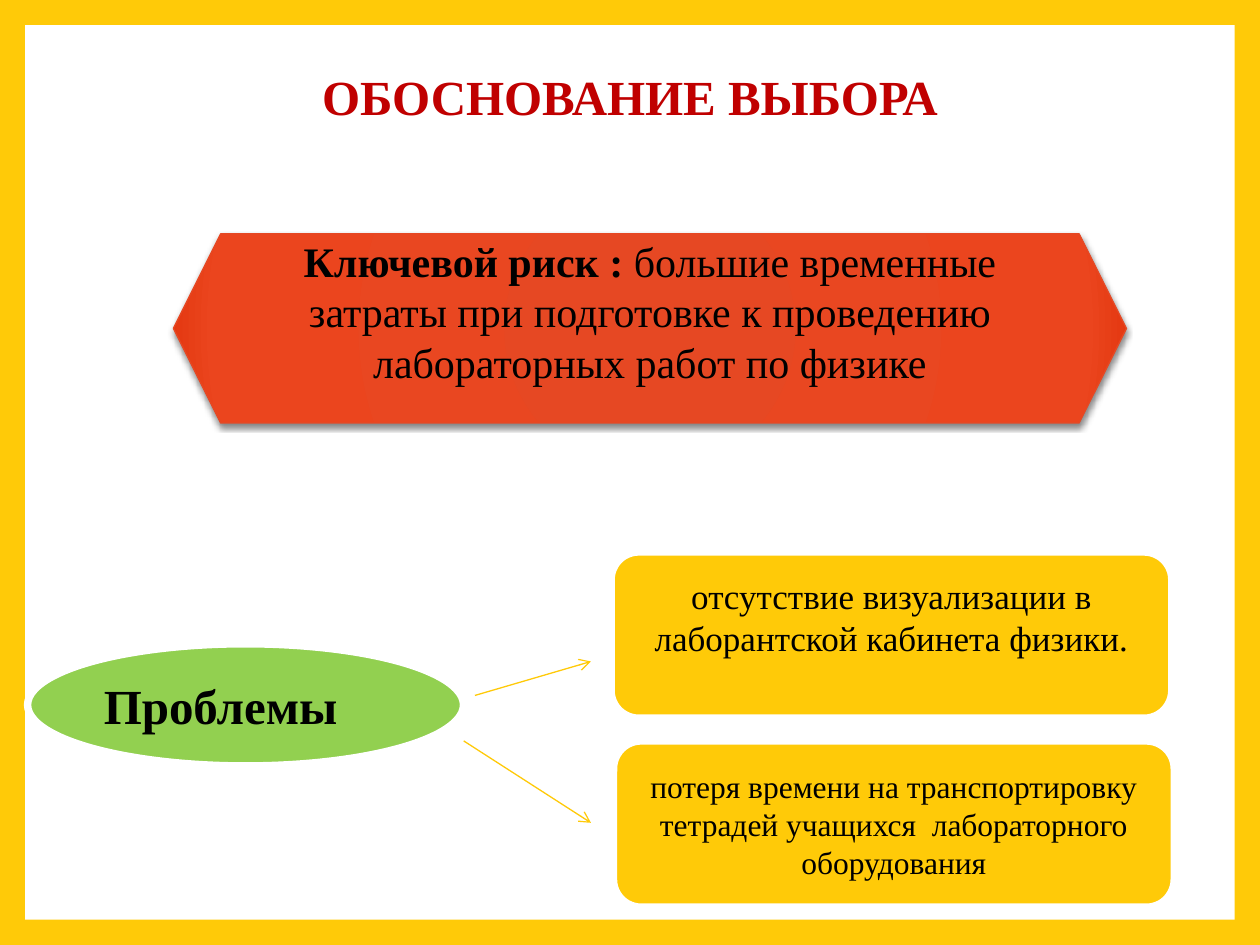
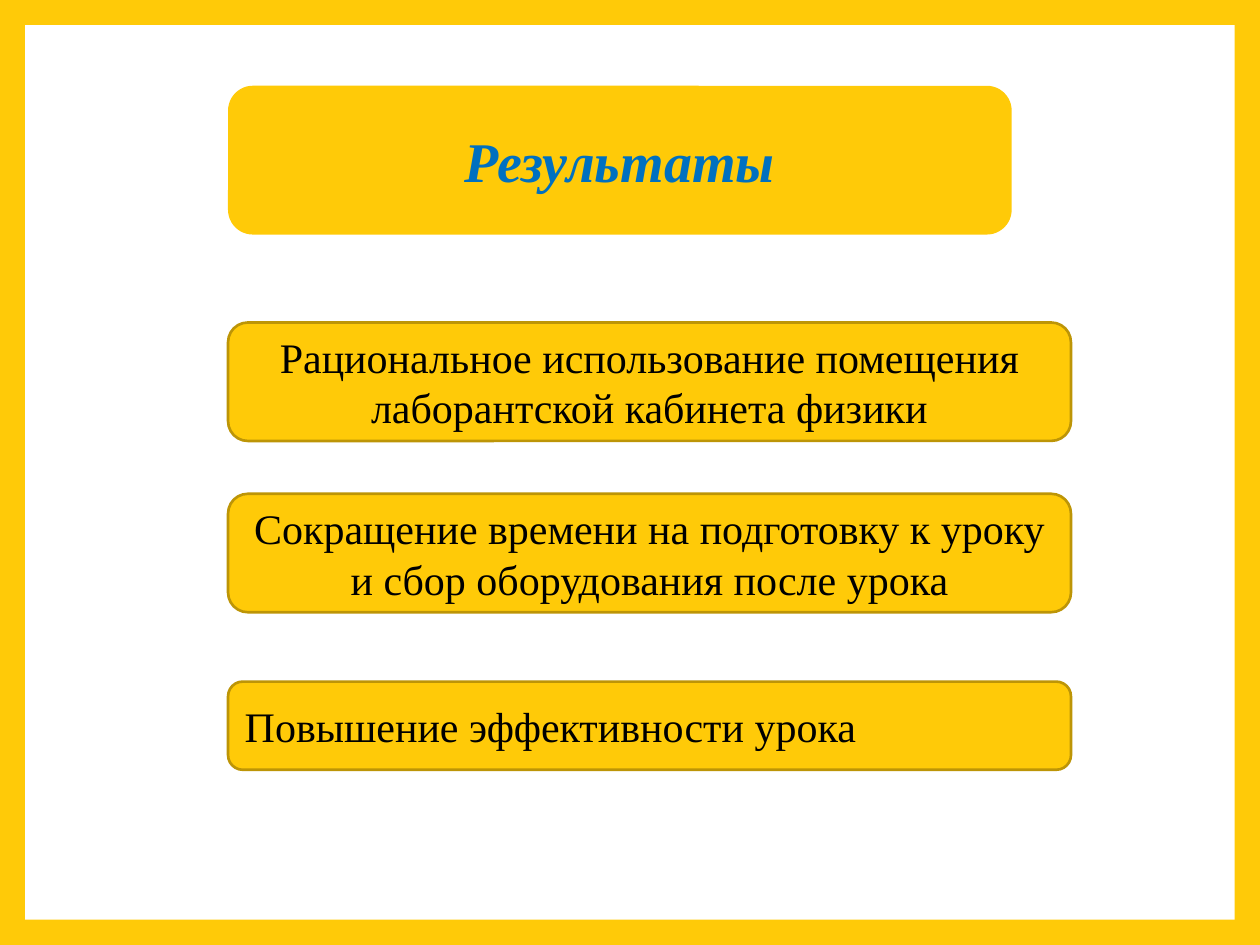
from lxml.etree import SubElement
from pptx import Presentation
from pptx.dml.color import RGBColor
from pptx.enum.shapes import MSO_CONNECTOR, MSO_SHAPE
from pptx.enum.text import MSO_ANCHOR, PP_ALIGN
from pptx.oxml import parse_xml
from pptx.oxml.ns import nsdecls, qn
from pptx.util import Pt

FONT = "Times New Roman"
YELLOW = RGBColor(0xFF, 0xCA, 0x08)
DARK_YELLOW = RGBColor(0xBD, 0x95, 0x06)
WHITE = RGBColor(0xFF, 0xFF, 0xFF)
BLACK = RGBColor(0x00, 0x00, 0x00)
RED = RGBColor(0xC0, 0x00, 0x00)
GREEN = RGBColor(0x92, 0xD0, 0x50)
BLUE = RGBColor(0x00, 0x70, 0xC0)
ORANGE = RGBColor(0xE6, 0x48, 0x23)
DEEP_ORANGE = RGBColor(0xEB, 0x45, 0x1E)
BURNT_ORANGE = RGBColor(0xE2, 0x36, 0x0E)

FRAME = 14.4
RESULT_LEFT = 130.3
RESULT_WIDTH = 481.7
TITLE_ONLY, BLANK = 5, 6


def place(shape, left, top, width, height):
    shape.left, shape.top = Pt(left), Pt(top)
    shape.width, shape.height = Pt(width), Pt(height)


def format_paragraph(paragraph, size, color=BLACK, bold=None, italic=None, align=PP_ALIGN.CENTER):
    paragraph.alignment = align
    font = paragraph.font
    font.name, font.size, font.bold, font.italic = FONT, Pt(size), bold, italic
    font.color.rgb = color


def add_box(slide, kind, box, fill, line=None, line_width=1):
    left, top, width, height = box
    shape = slide.shapes.add_shape(kind, Pt(left), Pt(top), Pt(width), Pt(height))
    shape.shadow.inherit = False
    shape.fill.solid()
    shape.fill.fore_color.rgb = fill
    if line is None:
        shape.line.fill.background()
    else:
        shape.line.color.rgb = line
        shape.line.width = Pt(line_width)
    return shape


def write(shape, text, size, **style):
    shape.text_frame.text = text
    format_paragraph(shape.text_frame.paragraphs[0], size, **style)


def add_arrow(slide, start, end):
    points = [Pt(value) for value in (*start, *end)]
    arrow = slide.shapes.add_connector(MSO_CONNECTOR.STRAIGHT, *points)
    arrow.line.color.rgb = YELLOW
    arrow.line.width = Pt(0.75)
    SubElement(arrow.line._get_or_add_ln(), qn("a:tailEnd"), type="arrow")
    SubElement(arrow.element.spPr, qn("a:effectLst"))


def set_radial_gradient(shape, stops):
    stop_xml = "".join(
        f'<a:gs pos="{position * 1000}"><a:srgbClr val="{color}"/></a:gs>'
        for position, color in stops
    )
    gradient = parse_xml(
        f'<a:gradFill {nsdecls("a")} rotWithShape="1"><a:gsLst>{stop_xml}</a:gsLst>'
        '<a:path path="circle"><a:fillToRect l="100000" t="100000" r="100000" b="100000"/>'
        "</a:path></a:gradFill>"
    )
    properties = shape.element.spPr
    properties.replace(properties.find(qn("a:solidFill")), gradient)


def set_drop_shadow(shape):
    shape.element.spPr.find(qn("a:effectLst")).append(parse_xml(
        f'<a:outerShdw {nsdecls("a")} blurRad="{Pt(3)}" dist="{Pt(2)}" dir="5400000" rotWithShape="0">'
        f'<a:srgbClr val="{BLACK}"><a:alpha val="45000"/></a:srgbClr></a:outerShdw>'
    ))


def set_up_master(presentation, slide):
    master = presentation.slide_master
    master.background.fill.solid()
    master.background.fill.fore_color.rgb = YELLOW
    panel = add_box(slide, MSO_SHAPE.RECTANGLE, (FRAME, FRAME, 720 - 2 * FRAME, 540 - 2 * FRAME), WHITE)
    master.shapes.element.insert(2, panel.element)


def add_key_risk(slide):
    hexagon = add_box(slide, MSO_SHAPE.HEXAGON, (99.1, 133.7, 544.6, 108), ORANGE, ORANGE, 0.79)
    set_radial_gradient(hexagon, [(0, ORANGE), (90, DEEP_ORANGE), (100, BURNT_ORANGE)])
    set_drop_shadow(hexagon)
    frame = hexagon.text_frame
    frame.margin_top, frame.margin_bottom = Pt(0), Pt(20)
    paragraph = frame.paragraphs[0]
    format_paragraph(paragraph, 24)
    label = paragraph.add_run()
    label.text = "Ключевой риск : "
    label.font.bold = True
    paragraph.add_run().text = (
        "большие временные затраты при подготовке к проведению лабораторных работ по физике"
    )


def build_rationale(slide):
    title = slide.shapes.title
    place(title, 68.4, 22.3, 583.2, 69.1)
    title.text_frame.vertical_anchor = MSO_ANCHOR.MIDDLE
    write(title, "ОБОСНОВАНИЕ ВЫБОРА", 28, color=RED, bold=True)
    title.text_frame.paragraphs[0].line_spacing = 0.9

    problems = add_box(slide, MSO_SHAPE.OVAL, (15.8, 367.9, 249.1, 69.8), GREEN, WHITE, 4.25)
    write(problems, "Проблемы", 28, bold=True, align=PP_ALIGN.LEFT)

    problem_boxes = [
        (349.2, 315.4, 20, 24.3, "отсутствие визуализации в лаборантской кабинета физики."),
        (350.6, 423.4, 18, 3.6,
         "потеря времени на транспортировку тетрадей учащихся  лабораторного оборудования"),
    ]
    for left, top, size, bottom_margin, text in problem_boxes:
        box = add_box(slide, MSO_SHAPE.ROUNDED_RECTANGLE, (left, top, 320.4, 95), YELLOW, WHITE, 4.25)
        box.text_frame.margin_bottom = Pt(bottom_margin)
        write(box, text, size)

    add_arrow(slide, (271.4, 397.4), (337.7, 378))
    add_arrow(slide, (265, 423.4), (337.7, 470.2))
    add_key_risk(slide)


def build_results(slide):
    heading = add_box(slide, MSO_SHAPE.FLOWCHART_ALTERNATE_PROCESS, (RESULT_LEFT, 49, 447.8, 85), YELLOW)
    write(heading, "Результаты", 32, color=BLUE, bold=True, italic=True)

    results = [
        (184.3, 67.7, PP_ALIGN.CENTER, "Рациональное использование помещения лаборантской кабинета физики"),
        (282.2, 67.7, PP_ALIGN.CENTER,
         "Сокращение времени на подготовку к уроку и сбор оборудования после урока"),
        (389.5, 50.4, PP_ALIGN.LEFT, "Повышение эффективности урока"),
    ]
    for top, height, align, text in results:
        box = add_box(slide, MSO_SHAPE.ROUNDED_RECTANGLE,
                      (RESULT_LEFT, top, RESULT_WIDTH, height), YELLOW, DARK_YELLOW, 1.5)
        write(box, text, 24, align=align)


def main():
    presentation = Presentation()
    presentation.slide_width, presentation.slide_height = Pt(720), Pt(540)
    layouts = presentation.slide_layouts
    rationale = presentation.slides.add_slide(layouts[TITLE_ONLY])
    set_up_master(presentation, rationale)
    build_rationale(rationale)
    build_results(presentation.slides.add_slide(layouts[BLANK]))
    presentation.save("out.pptx")


if __name__ == "__main__":
    main()
